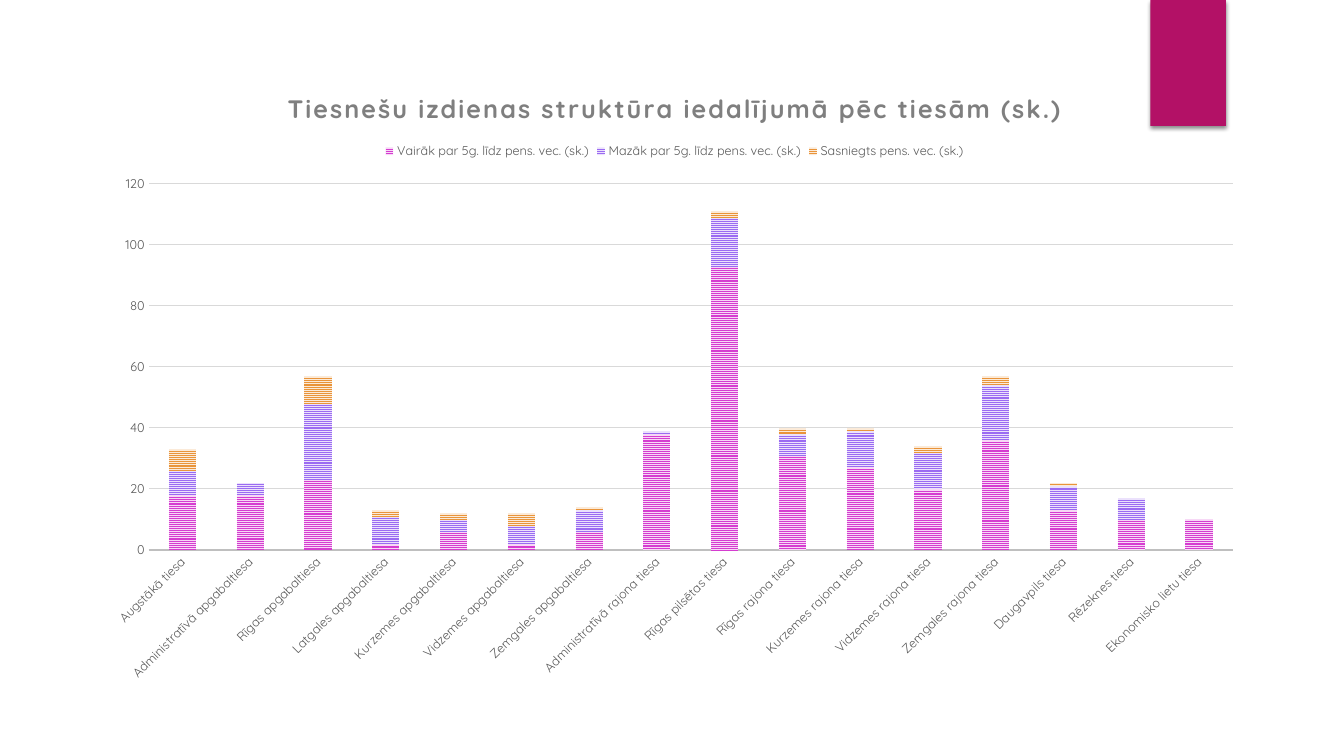
from lxml import etree
from pptx import Presentation
from pptx import util as u
from pptx.chart.data import CategoryChartData
from pptx.dml.color import RGBColor
from pptx.enum import chart as ch
from pptx.enum import dml, shapes
from pptx.oxml import parse_xml
from pptx.oxml.ns import nsdecls, qn

FONT = "Quicksand"
TITLE = "Tiesnešu izdienas struktūra iedalījumā pēc tiesām (sk.)"
COURTS = [
    "Augstākā tiesa", "Administratīvā apgabaltiesa", "Rīgas apgabaltiesa",
    "Latgales apgabaltiesa", "Kurzemes apgabaltiesa", "Vidzemes apgabaltiesa",
    "Zemgales apgabaltiesa", "Administratīvā rajona tiesa", "Rīgas pilsētas tiesa",
    "Rīgas rajona tiesa", "Kurzemes rajona tiesa", "Vidzemes rajona tiesa",
    "Zemgales rajona tiesa", "Daugavpils tiesa", "Rēzeknes tiesa",
    "Ekonomisko lietu tiesa",
]
SERIES = [
    ("Vairāk par 5g. līdz pens. vec. (sk.)", "D53DD0", "F7D8F6",
     [18, 18, 23, 2, 6, 2, 6, 38, 93, 31, 27, 20, 36, 13, 10, 10]),
    ("Mazāk par 5g. līdz pens. vec. (sk.)", "9B6BF2", "EBE1FC",
     [8, 4, 25, 9, 4, 6, 7, 1, 16, 7, 12, 12, 18, 8, 7, 0]),
    ("Sasniegts pens. vec. (sk.)", "E9943A", "FBEAD8",
     [7, 0, 9, 2, 2, 4, 1, 0, 2, 2, 1, 2, 3, 1, 0, 0]),
]


def rgb(value):
    """Turn a hex string into a colour."""
    return RGBColor.from_string(value)


def format_font(font, size, color, bold=False):
    """Apply the slide's typeface with a size, colour and weight."""
    font.name = FONT
    font.size = u.Pt(size)
    font.bold = bold
    font.color.rgb = rgb(color)


def write_text(frame, content, spacing=0, **style):
    """Write one formatted run into a text frame."""
    run = frame.paragraphs[0].add_run()
    run.text = content
    format_font(run.font, **style)
    run.font._element.set("spc", str(int(spacing * 100)))


def add_tab(slide, left, top, width, height):
    """Draw the coloured tab hanging from the top edge."""
    tab = slide.shapes.add_shape(
        shapes.MSO_SHAPE.RECTANGLE, *map(u.Inches, (left, top, width, height)))
    tab.fill.solid()
    tab.fill.fore_color.rgb = rgb("B31166")
    tab.line.fill.background()
    tab._element.spPr.append(parse_xml(
        f'<a:effectLst {nsdecls("a")}><a:outerShdw blurRad="{u.Pt(3)}" '
        f'dist="{u.Pt(2)}" dir="5400000" rotWithShape="0"><a:srgbClr val="000000">'
        '<a:alpha val="45000"/></a:srgbClr></a:outerShdw></a:effectLst>'))


def place_plot(chart, x, y, w, h):
    """Fix the inner plot area as fractions of the chart."""
    plot_area = chart._chartSpace.chart.plotArea
    for old in plot_area.findall(qn("c:layout")):
        plot_area.remove(old)
    layout = parse_xml(f'<c:layout {nsdecls("c")}><c:manualLayout/></c:layout>')
    settings = {"layoutTarget": "inner", "xMode": "edge", "yMode": "edge",
                "x": x, "y": y, "w": w, "h": h}
    for name, value in settings.items():
        etree.SubElement(layout[0], qn(f"c:{name}")).set("val", str(value))
    plot_area.insert(0, layout)


def format_axes(chart):
    """Style both axes and the horizontal grid."""
    for axis in (chart.category_axis, chart.value_axis):
        axis.major_tick_mark = axis.minor_tick_mark = ch.XL_TICK_MARK.NONE
        format_font(axis.tick_labels.font, 9, "595959")
    category, value = chart.category_axis, chart.value_axis
    category.format.line.color.rgb = rgb("BFBFBF")
    category.format.line.width = u.Pt(1.5)
    category._element.txPr.bodyPr.set("rot", "-2700000")
    value.format.line.fill.background()
    value.minimum_scale, value.maximum_scale, value.major_unit = 0, 120, 20
    grid = value.major_gridlines.format.line
    grid.color.rgb = rgb("D9D9D9")
    grid.width = u.Pt(0.75)


def add_court_chart(slide, left, top, width, height):
    """Draw the stacked columns of judges by court."""
    data = CategoryChartData(number_format="0")
    data.categories = COURTS
    for name, _, _, values in SERIES:
        data.add_series(name, values)
    chart = slide.shapes.add_chart(
        ch.XL_CHART_TYPE.COLUMN_STACKED,
        *map(u.Inches, (left, top, width, height)), data).chart
    format_font(chart.font, 10, "000000")
    write_text(chart.chart_title.text_frame, TITLE, spacing=1.5,
               size=18, color="7F7F7F", bold=True)
    chart.chart_title.include_in_layout = False
    chart.has_legend = True
    chart.legend.position = ch.XL_LEGEND_POSITION.TOP
    chart.legend.include_in_layout = False
    format_font(chart.legend.font, 9, "595959")
    plot = chart.plots[0]
    plot.gap_width, plot.overlap, plot.vary_by_categories = 150, 100, False
    for series, (_, front, back, _) in zip(plot.series, SERIES):
        fill = series.format.fill
        fill.patterned()
        fill.pattern = dml.MSO_PATTERN.NARROW_HORIZONTAL
        fill.fore_color.rgb = rgb(front)
        fill.back_color.rgb = rgb(back)
        series.invert_if_negative = False
    format_axes(chart)
    place_plot(chart, x=0.048, y=0.186, w=0.932, h=0.586)


def main():
    """Build and save the slide."""
    presentation = Presentation()
    presentation.slide_width = u.Inches(13.33)
    presentation.slide_height = u.Inches(7.5)
    slide = presentation.slides.add_slide(presentation.slide_layouts[6])
    add_tab(slide, 11.41, 0, 0.75, 1.25)
    add_court_chart(slide, 0.92, 0.67, 11.54, 6.2)
    presentation.save("out.pptx")


if __name__ == "__main__":
    main()
